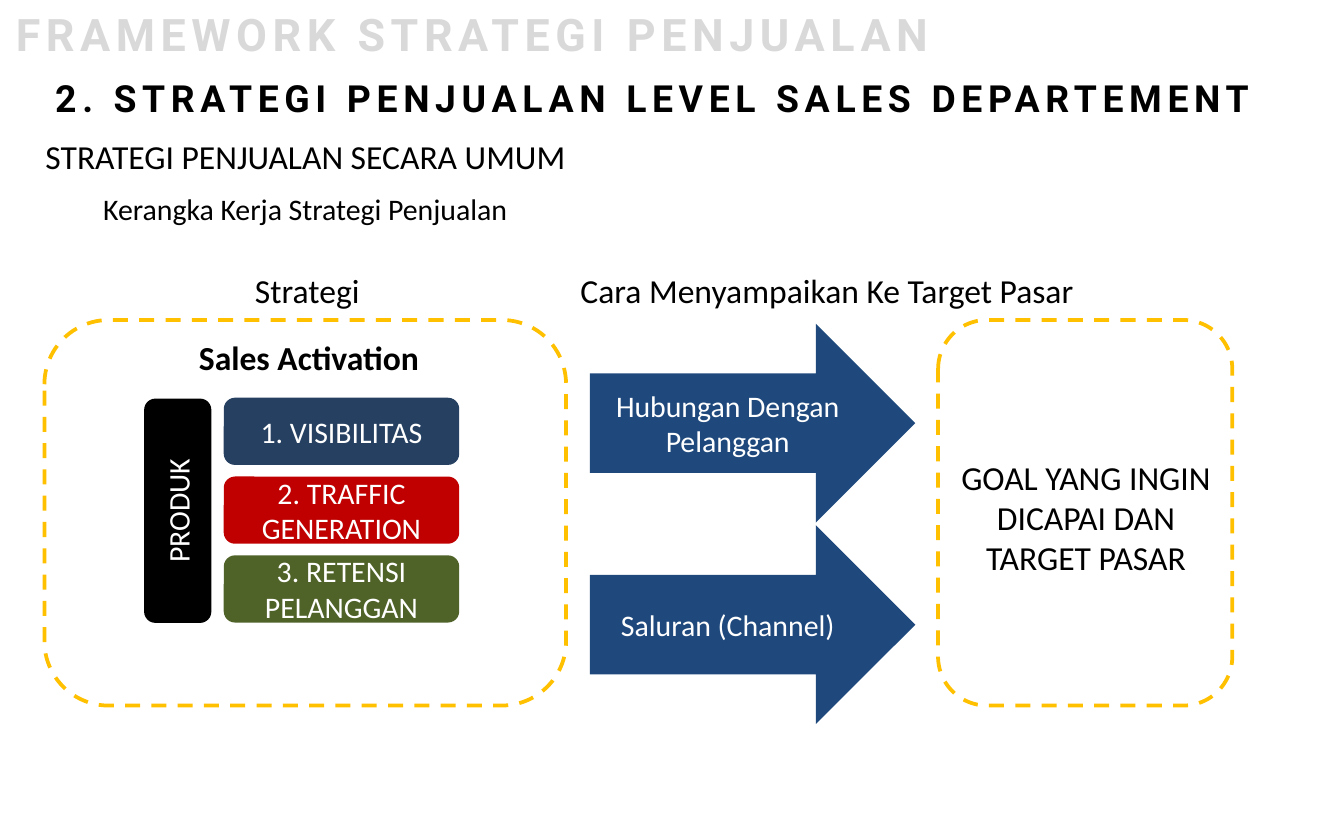
from pptx import Presentation, util as u
from pptx.dml.color import RGBColor
from pptx.enum import dml, shapes, text

BLACK, WHITE, GOLD, NAVY, GREY = "000000", "FFFFFF", "FFC000", "1F497D", "D9D9D9"
HEADING = {"name": "Roboto", "bold": True}
ROUNDED = shapes.MSO_SHAPE.ROUNDED_RECTANGLE
ARROW = shapes.MSO_SHAPE.RIGHT_ARROW
CENTER = text.PP_ALIGN.CENTER


def color(value):
    """Turn a hex string into a colour."""
    return RGBColor.from_string(value)


def cm(*values):
    """Turn numbers into centimetre lengths."""
    return [u.Cm(v) for v in values]


def set_attrs(obj, values):
    """Set every attribute named in a dict of format values."""
    for name, value in values.items():
        setattr(obj, name, value)


def write(sp, words, size, ink, align=text.PP_ALIGN.LEFT, frame=None, font=None, spacing=0):
    """Write one formatted paragraph into a shape."""
    tf = sp.text_frame
    set_attrs(tf, {"word_wrap": True, **(frame or {})})
    p = tf.paragraphs[0]
    p.alignment = align
    r = p.add_run()
    r.text = words
    set_attrs(r.font, {"name": "Calibri", "size": u.Pt(size), **(font or {})})
    r.font.color.rgb = color(ink)
    if spacing:
        r._r.get_or_add_rPr().set("spc", str(spacing * 100))


def add_title(s, box, words):
    """Move and format the title placeholder."""
    sp = s.shapes.title
    set_attrs(sp, dict(zip(("left", "top", "width", "height"), cm(*box))))
    frame = {"vertical_anchor": text.MSO_ANCHOR.TOP, "auto_size": text.MSO_AUTO_SIZE.NONE}
    write(sp, words, 20, BLACK, frame=frame, font=HEADING, spacing=3)


def add_label(s, box, words, size=18, ink=BLACK, wrap=False, **style):
    """Add a text box that grows with its text."""
    sp = s.shapes.add_textbox(*cm(*box))
    frame = {"word_wrap": wrap, "auto_size": text.MSO_AUTO_SIZE.SHAPE_TO_FIT_TEXT}
    write(sp, words, size, ink, frame=frame, **style)


def add_frame(s, box):
    """Add a dashed rounded frame."""
    sp = s.shapes.add_shape(ROUNDED, *cm(*box))
    sp.shadow.inherit = False
    sp.fill.background()
    sp.line.color.rgb = color(GOLD)
    set_attrs(sp.line, {"width": u.Pt(2), "dash_style": dml.MSO_LINE.DASH})


def add_block(s, kind, box, words, fill, rotation=0):
    """Add a filled shape with white centred text."""
    sp = s.shapes.add_shape(kind, *cm(*box))
    sp.shadow.inherit = False
    sp.rotation = rotation
    sp.fill.solid()
    sp.fill.fore_color.rgb = color(fill)
    sp.line.fill.background()
    write(sp, words, 16, WHITE, CENTER, {"vertical_anchor": text.MSO_ANCHOR.MIDDLE})


def main():
    """Build the sales strategy framework slide."""
    prs = Presentation()
    set_attrs(prs, {"slide_width": u.Cm(25.4), "slide_height": u.Cm(15.88)})
    s = prs.slides.add_slide(prs.slide_layouts[5])

    add_label(s, (0.05, 0, 25.4, 1.27), "FRAMEWORK STRATEGI PENJUALAN", 24, GREY,
              wrap=True, font=HEADING, spacing=3)
    add_title(s, (0.79, 1.3, 24.66, 1.12), "2. STRATEGI PENJUALAN LEVEL SALES DEPARTEMENT")
    add_label(s, (0.61, 2.44, 10.41, 1.02), "STRATEGI PENJUALAN SECARA UMUM")
    add_label(s, (1.7, 3.48, 22.02, 0.94), "Kerangka Kerja Strategi Penjualan", 16, wrap=True)

    for left, width in ((0.84, 9.86), (17.73, 5.56)):
        add_frame(s, (left, 6.05, width, 7.29))
    add_label(s, (4.57, 4.98, 2.51, 1.02), "Strategi")
    add_label(s, (10.72, 4.98, 9.93, 1.02), "Cara Menyampaikan Ke Target Pasar")
    add_label(s, (3.51, 6.25, 4.7, 1.02), "Sales Activation", font={"bold": True})

    add_block(s, ROUNDED, (1.24, 9.02, 4.24, 1.27), "PRODUK", BLACK, 270)
    activations = (("1. VISIBILITAS", "254061"), ("2. TRAFFIC GENERATION", "C00000"),
                   ("3. RETENSI PELANGGAN", "4F6228"))
    for i, (words, fill) in enumerate(activations):
        add_block(s, ROUNDED, (4.23, 7.52 + 1.49 * i, 4.45, 1.27), words, fill)
    for i, words in enumerate(("Hubungan Dengan Pelanggan", "Saluran (Channel)")):
        add_block(s, ARROW, (11.15, 6.12 + 3.81 * i, 6.15, 3.76), words, NAVY)
    add_label(s, (17.86, 8.51, 5.33, 2.57), "GOAL YANG INGIN DICAPAI DAN TARGET PASAR",
              wrap=True, align=CENTER)
    prs.save("out.pptx")


if __name__ == "__main__":
    main()
